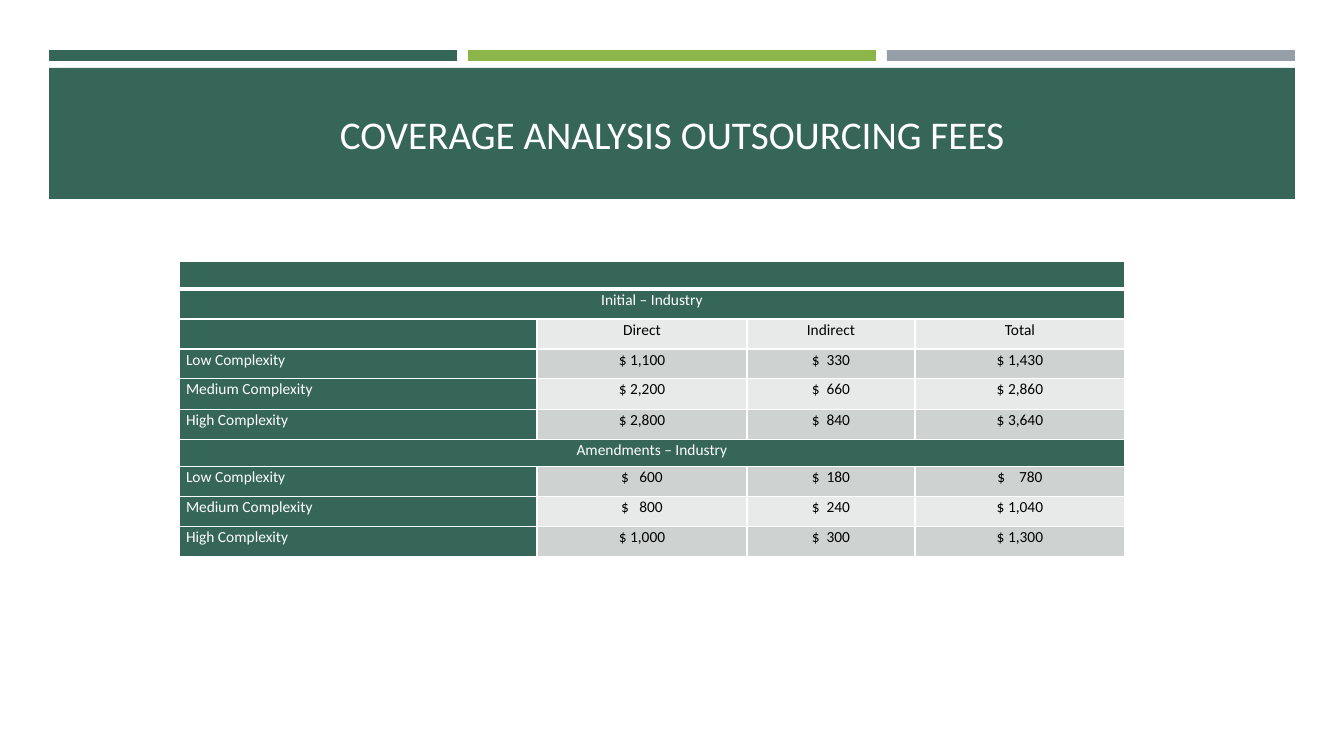
"""Build the coverage analysis outsourcing fees slide."""
from lxml.etree import SubElement
from pptx import Presentation
from pptx.dml.color import RGBColor
from pptx.enum.shapes import MSO_SHAPE as Shape
from pptx.enum.text import MSO_ANCHOR as Anchor, PP_ALIGN as Align
from pptx.oxml.ns import qn
from pptx.util import Emu, Pt

THEME = {
    "font": "Calibri", "title_size": 28, "table_size": 11,
    "green": "366658", "lime": "8CB64A", "gray": "969FA7",
    "light": "E8EAEA", "dark": "CED3D1", "white": "FFFFFF", "black": "000000",
}
COLUMN_WIDTHS = [358, 210, 168, 210]
ROW_HEIGHTS = [28, 30, 30, 30, 31, 30, 27, 30, 30, 30]
FEES = [
    [""],
    ["Initial – Industry"],
    ["", "Direct", "Indirect", "Total"],
    ["Low Complexity", "$ 1,100", "$  330", "$ 1,430"],
    ["Medium Complexity", "$ 2,200", "$  660", "$ 2,860"],
    ["High Complexity", "$ 2,800", "$  840", "$ 3,640"],
    ["Amendments – Industry"],
    ["Low Complexity", "$   600", "$  180", "$    780"],
    ["Medium Complexity", "$   800", "$  240", "$ 1,040"],
    ["High Complexity", "$ 1,000", "$  300", "$ 1,300"],
]


def px(*lengths):
    return [Emu(round(length * 914400 / 100.8)) for length in lengths]


def style_text(para, size, color, align):
    para.alignment = align
    for span in para.runs:
        span.font.name = THEME["font"]
        span.font.size = Pt(size)
        span.font.color.rgb = RGBColor.from_string(THEME[color])


deck = Presentation()
deck.slide_width, deck.slide_height = px(1344, 756)
page = deck.slides.add_slide(deck.slide_layouts[6])

bands = [(49 + 419 * i, 50, 408, 11, color) for i, color in enumerate(["green", "lime", "gray"])]
bands.append((49, 68, 1246, 131, "green"))
for *place, color in bands:
    band = page.shapes.add_shape(Shape.RECTANGLE, *px(*place))
    band.shadow.inherit = False
    band.fill.solid()
    band.fill.fore_color.rgb = RGBColor.from_string(THEME[color])
    band.line.fill.background()

title = page.shapes.add_textbox(*px(64, 78, 1216, 112)).text_frame
title.word_wrap = True
title.vertical_anchor = Anchor.MIDDLE
title.text = "COVERAGE ANALYSIS OUTSOURCING FEES"
style_text(title.paragraphs[0], THEME["title_size"], "white", Align.CENTER)

table = page.shapes.add_table(
    len(FEES), len(COLUMN_WIDTHS), *px(179, 261, sum(COLUMN_WIDTHS), sum(ROW_HEIGHTS))
).table
table.first_row = table.horz_banding = False
for column, width in zip(table.columns, px(*COLUMN_WIDTHS)):
    column.width = width
for row, height in zip(table.rows, px(*ROW_HEIGHTS)):
    row.height = height

for r, texts in enumerate(FEES):
    is_band = len(texts) == 1
    if is_band:
        table.cell(r, 0).merge(table.cell(r, len(COLUMN_WIDTHS) - 1))
    for c in range(len(COLUMN_WIDTHS)):
        cell = table.cell(r, c)
        is_green = is_band or c == 0
        cell.margin_left, cell.margin_right, cell.margin_top, cell.margin_bottom = px(7, 7, 0, 0)
        for side in ["lnL", "lnR", "lnT", "lnB"]:
            weight = 3 if (r, side) == (0, "lnB") else 1
            border = SubElement(cell._tc.get_or_add_tcPr(), qn(f"a:{side}"), w=str(Pt(weight)))
            SubElement(SubElement(border, qn("a:solidFill")), qn("a:srgbClr"), val=THEME["white"])
        fill = "green" if is_green else "dark" if r % 2 else "light"
        cell.fill.solid()
        cell.fill.fore_color.rgb = RGBColor.from_string(THEME[fill])

        para = cell.text_frame.paragraphs[0]
        para.line_spacing = 1.07
        if is_band:
            para.space_before = Pt(2)
        text = texts[c] if c < len(texts) else ""
        if text:
            para.text = text
        else:
            SubElement(para._p, qn("a:endParaRPr"), sz=str(THEME["table_size"] * 100))
        align = Align.CENTER if is_band or c else Align.LEFT
        style_text(para, THEME["table_size"], "white" if is_green else "black", align)

deck.save("out.pptx")
